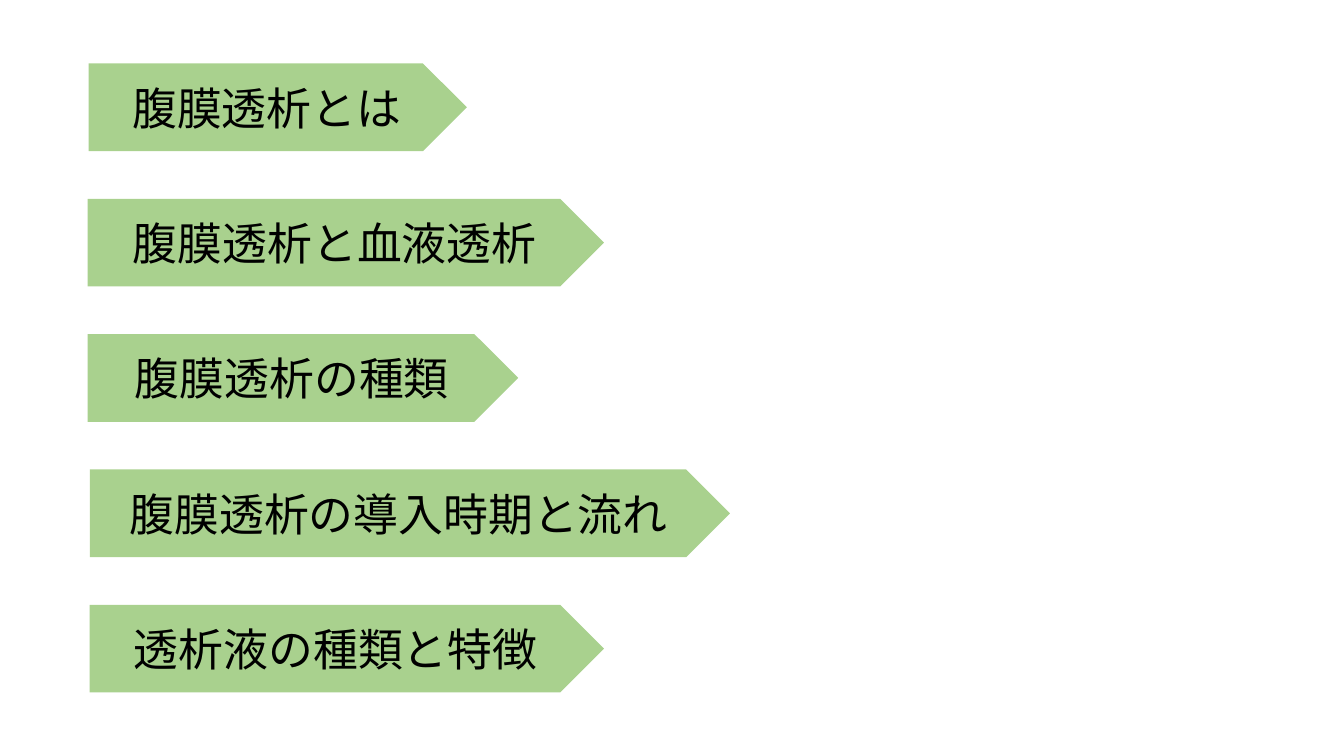
from lxml import etree
from pptx import Presentation
from pptx import util as u
from pptx.dml.color import RGBColor
from pptx.enum import shapes, text
from pptx.oxml.ns import qn

GREEN = RGBColor(0xA9, 0xD1, 0x8E)
BLACK = RGBColor(0x00, 0x00, 0x00)
FONT = "Noto Sans CJK JP"
TOPICS = [
    ("腹膜透析とは", 0.88, 3.75),
    ("腹膜透析と血液透析", 0.87, 5.12),
    ("腹膜透析の種類", 0.87, 4.27),
    ("腹膜透析の導入時期と流れ", 0.89, 6.35),
    ("透析液の種類と特徴", 0.89, 5.1),
]
SLIDE_WIDTH, SLIDE_HEIGHT = 13.33, 7.5
ARROW_HEIGHT = 0.87
FIRST_TOP = 0.63
ROW_PITCH = (SLIDE_HEIGHT - 2 * FIRST_TOP - ARROW_HEIGHT) / (len(TOPICS) - 1)
FONT_FORMAT = {"name": FONT, "size": u.Pt(32)}


def add_topic(slide, row, label, left, width):
    top = FIRST_TOP + row * ROW_PITCH
    shape = slide.shapes.add_shape(
        shapes.MSO_SHAPE.PENTAGON,
        *(u.Inches(length) for length in (left, top, width, ARROW_HEIGHT)),
    )
    shape.shadow.inherit = False
    shape.fill.solid()
    shape.fill.fore_color.rgb = GREEN
    shape.line.fill.background()
    frame = shape.text_frame
    frame.word_wrap = True
    frame.vertical_anchor = text.MSO_ANCHOR.MIDDLE
    paragraph = frame.paragraphs[0]
    paragraph.alignment = text.PP_ALIGN.CENTER
    run = paragraph.add_run()
    run.text = label
    for name, value in FONT_FORMAT.items():
        setattr(run.font, name, value)
    run.font.color.rgb = BLACK
    properties = run._r.get_or_add_rPr()
    properties.set("lang", "ja-JP")
    latin = properties.find(qn("a:latin"))
    latin.addnext(etree.Element(qn("a:ea"), typeface=FONT))


def main():
    """Build a slide listing the dialysis topics as arrows."""
    presentation = Presentation()
    presentation.slide_width = u.Inches(SLIDE_WIDTH)
    presentation.slide_height = u.Inches(SLIDE_HEIGHT)
    slide = presentation.slides.add_slide(presentation.slide_layouts[6])
    for row, topic in enumerate(TOPICS):
        add_topic(slide, row, *topic)
    presentation.save("out.pptx")


if __name__ == "__main__":
    main()
